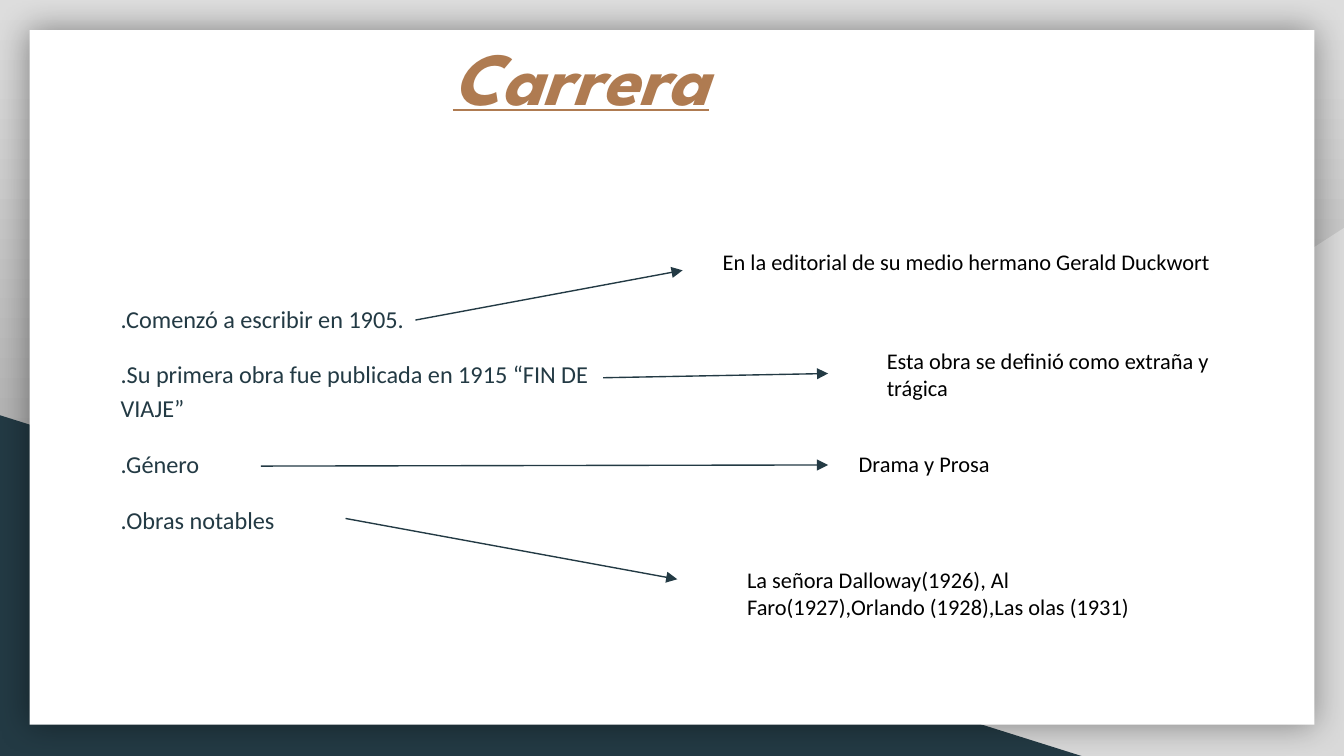
from typing import NamedTuple

from pptx import Presentation, util as u
from pptx.dml.color import RGBColor
from pptx.enum import shapes as es, text as et
from pptx.oxml import parse_xml
from pptx.oxml.ns import nsdecls, qn

NAVY = RGBColor(0x23, 0x3A, 0x44)
BROWN = RGBColor(0xAF, 0x7B, 0x51)
BLACK = RGBColor(0, 0, 0)
WHITE = RGBColor(0xFF, 0xFF, 0xFF)
PALE = RGBColor(0xD9, 0xD9, 0xD9)
LIGHT = RGBColor(0xDD, 0xDD, 0xDD)
GREY = RGBColor(0x91, 0x91, 0x91)

TOP, BASE = et.MSO_ANCHOR.TOP, et.MSO_ANCHOR.BOTTOM
TRI, RECT = es.MSO_SHAPE.RIGHT_TRIANGLE, es.MSO_SHAPE.RECTANGLE

HEAD = {"name": "League Spartan", "size": u.Pt(40), "bold": True,
        "italic": True, "underline": True}
BODY = {"name": "Calibri", "size": u.Pt(13)}
NOTE = {"name": "Calibri", "size": u.Pt(12)}
FRAME = {"word_wrap": True, "margin_left": u.Cm(0.25), "margin_right": u.Cm(0.25),
         "margin_top": u.Cm(0.25), "margin_bottom": u.Cm(0.25)}


class Box(NamedTuple):
    left: float
    top: float
    width: float
    height: float


class Panel(NamedTuple):
    kind: es.MSO_SHAPE
    box: Box
    color: RGBColor
    flip: bool = False
    glow: bool = False


class Label(NamedTuple):
    box: Box
    lines: list[str]
    font: dict = NOTE
    color: RGBColor = BLACK
    anchor: et.MSO_ANCHOR = TOP
    para: dict = {}


class Arrow(NamedTuple):
    x1: float
    y1: float
    x2: float
    y2: float


PANELS = [
    Panel(TRI, Box(9.96, 4.31, 15.44, 9.98), PALE, flip=True),
    Panel(TRI, Box(0, 7.85, 20.47, 6.45), NAVY),
    Panel(RECT, Box(0.56, 0.57, 24.28, 13.13), WHITE, glow=True),
]
LABELS = [
    Label(Box(8.31, 0.33, 10.41, 4.19), ["Carrera"], HEAD, BROWN),
    Label(Box(2.03, 5.41, 10.31, 5.89),
          [".Comenzó a escribir en 1905.",
           ".Su primera obra fue publicada en 1915 “FIN DE VIAJE”",
           ".Género", ".Obras notables"],
          BODY, NAVY, para={"line_spacing": 1.15, "space_before": u.Pt(12)}),
    Label(Box(16.51, 6.32, 7.32, 1.55), ["Esta obra se definió como extraña y trágica"]),
    Label(Box(13.41, 3.89, 10.08, 1.55),
          ["En la editorial de su medio hermano Gerald Duckwort"], anchor=BASE),
    Label(Box(15.98, 8.25, 6.38, 1.02), ["Drama y Prosa"]),
    Label(Box(13.87, 10.46, 8.69, 1.55),
          ["La señora Dalloway(1926), Al Faro(1927),Orlando (1928),Las olas (1931)"]),
]
ARROWS = [
    Arrow(11.4, 7.14, 15.65, 7.06),
    Arrow(7.85, 6.05, 12.9, 5.11),
    Arrow(4.93, 8.81, 15.65, 8.79),
    Arrow(6.53, 9.8, 12.8, 10.95),
]


def style(item, vals: dict) -> None:
    for key, val in vals.items():
        setattr(item, key, val)


def paint(slide) -> None:
    fill = slide.background.fill
    fill.gradient()
    fill.gradient_angle = 270
    for stop, color, pos in zip(fill.gradient_stops, (LIGHT, GREY), (0, 1)):
        stop.color.rgb = color
        stop.position = pos


def add_panel(slide, panel: Panel) -> None:
    shape = slide.shapes.add_shape(panel.kind, *map(u.Cm, panel.box))
    shape.fill.solid()
    shape.fill.fore_color.rgb = panel.color
    shape.line.fill.background()
    shape.shadow.inherit = False
    props = shape.element.spPr
    if panel.flip:
        props.find(qn("a:xfrm")).set("flipH", "1")
    if panel.glow:
        props.find(qn("a:effectLst")).append(parse_xml(
            f'<a:outerShdw {nsdecls("a")} blurRad="{u.Pt(18)}" dist="0" dir="0" '
            'algn="ctr" rotWithShape="0"><a:srgbClr val="000000">'
            '<a:alpha val="40000"/></a:srgbClr></a:outerShdw>'))


def add_label(slide, label: Label) -> None:
    frame = slide.shapes.add_textbox(*map(u.Cm, label.box)).text_frame
    style(frame, FRAME)
    frame.vertical_anchor = label.anchor
    for i, line in enumerate(label.lines):
        para = frame.add_paragraph() if i else frame.paragraphs[0]
        style(para, label.para)
        if not i:
            para.space_before = u.Pt(0)
        run = para.add_run()
        run.text = line
        style(run.font, label.font)
        run.font.color.rgb = label.color


def add_arrow(slide, arrow: Arrow) -> None:
    link = slide.shapes.add_connector(es.MSO_CONNECTOR.STRAIGHT, *map(u.Cm, arrow))
    link.line.color.rgb = NAVY
    link.line.width = u.Pt(0.75)
    props = link.element.spPr
    props.find(qn("a:ln")).append(
        parse_xml(f'<a:tailEnd {nsdecls("a")} type="triangle"/>'))
    props.append(parse_xml(f'<a:effectLst {nsdecls("a")}/>'))


def main() -> None:
    deck = Presentation()
    style(deck, {"slide_width": u.Cm(25.4), "slide_height": u.Cm(14.29)})
    slide = deck.slides.add_slide(deck.slide_layouts[6])
    paint(slide)
    for draw, items in ((add_panel, PANELS), (add_label, LABELS), (add_arrow, ARROWS)):
        for item in items:
            draw(slide, item)
    deck.save("out.pptx")


if __name__ == "__main__":
    main()
